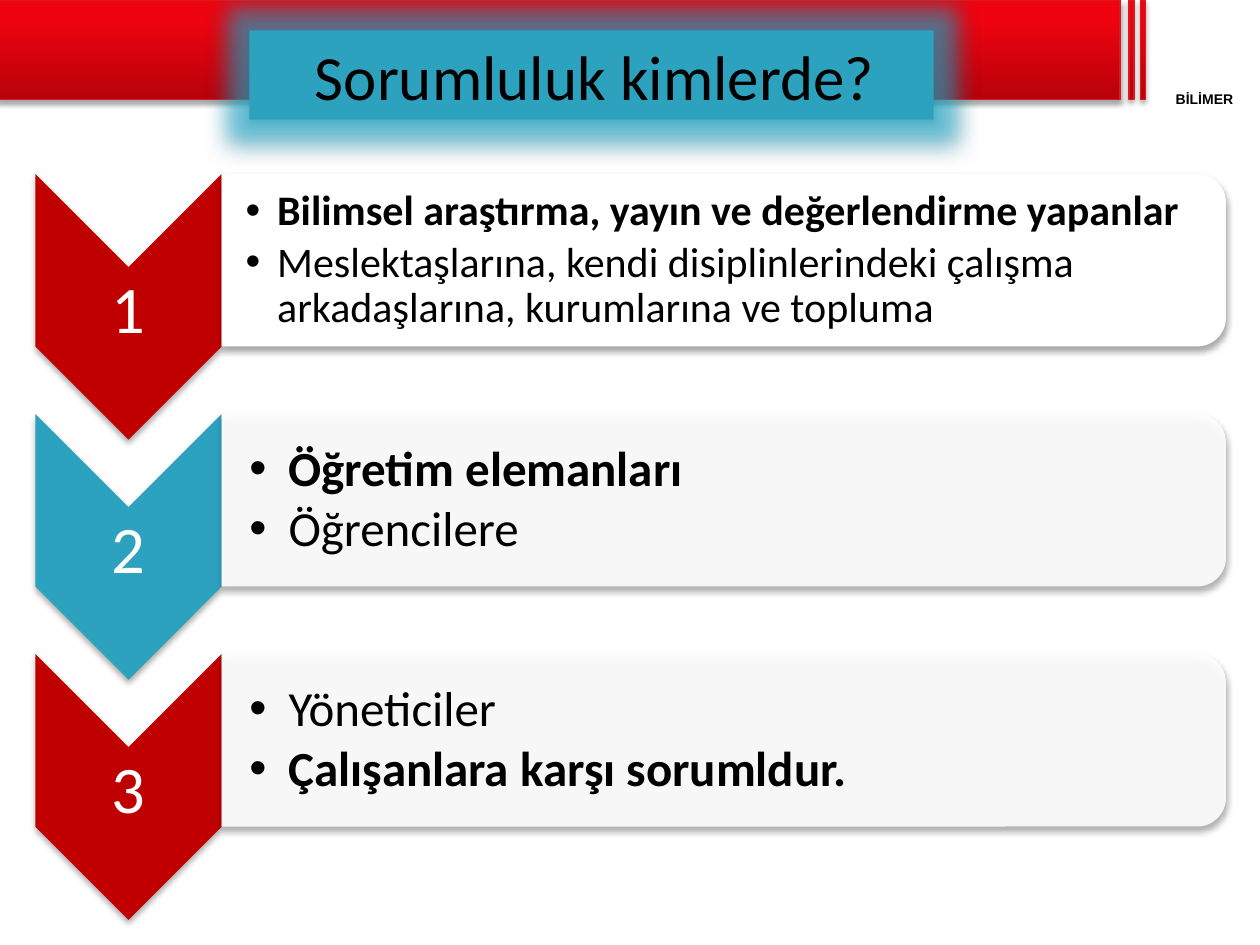
from lxml.etree import SubElement
from pptx import Presentation
from pptx.dml.color import RGBColor
from pptx.enum.shapes import MSO_SHAPE
from pptx.enum.text import MSO_ANCHOR, MSO_AUTO_SIZE, PP_ALIGN
from pptx.oxml.ns import qn
from pptx.util import Inches, Pt

BLACK = RGBColor(0x00, 0x00, 0x00)
WHITE = RGBColor(0xFF, 0xFF, 0xFF)
CRIMSON = RGBColor(0xC0, 0x00, 0x00)
TEAL = RGBColor(0x2D, 0xA2, 0xBF)
GLOW = RGBColor(0x1A, 0xB2, 0xD8)
BANNER_DARK = RGBColor(0xB8, 0x02, 0x0B)
BANNER_LIGHT = RGBColor(0xEE, 0x03, 0x0E)
BANNER_LINE = RGBColor(0xDA, 0x1A, 0x23)

# Chevron colour, card opacity, text size, left inset, bullet indent, (line, bold) pairs
STEPS = [
    (CRIMSON, 100, 24, 0.19, 0.25, [
        ("Bilimsel araştırma, yayın ve değerlendirme yapanlar", True),
        ("Meslektaşlarına, kendi disiplinlerindeki çalışma "
         "arkadaşlarına, kurumlarına ve topluma", False)]),
    (TEAL, 90, 28, 0.22, 0.31, [
        ("Öğretim elemanları", True), ("Öğrencilere", False)]),
    (CRIMSON, 90, 28, 0.22, 0.31, [
        ("Yöneticiler", False), ("Çalışanlara karşı sorumldur.", True)]),
]


def add_alpha(color, percent):
    SubElement(color, qn("a:alpha"), val=str(percent * 1000))


def add_effect(shape, kind, color, opacity, **settings):
    """Append a glow or shadow to the shape's own effect list."""
    shape.shadow.inherit = False
    effects = shape._element.spPr.find(qn("a:effectLst"))
    effect = SubElement(effects, qn(f"a:{kind}"), **settings)
    add_alpha(SubElement(effect, qn("a:srgbClr"), val=str(color)), opacity)


def add_shadow(shape, opacity, blur, distance):
    add_effect(shape, "outerShdw", BLACK, opacity, blurRad=str(Pt(blur)),
               dist=str(Pt(distance)), dir="5400000", rotWithShape="0")


def place(shape, left, top, width, height):
    shape.left, shape.top = Inches(left), Inches(top)
    shape.width, shape.height = Inches(width), Inches(height)


def bring_to_front(page, shape):
    page.shapes[-1]._element.addnext(shape._element)


def set_frame(frame, left_inset, inset, anchor=MSO_ANCHOR.MIDDLE):
    frame.word_wrap = True
    frame.auto_size = MSO_AUTO_SIZE.NONE
    frame.vertical_anchor = anchor
    frame.margin_left = Inches(left_inset)
    frame.margin_right = frame.margin_top = frame.margin_bottom = Inches(inset)


def style(para, size, color, bold=False, name="Calibri"):
    for span in para.runs:
        span.font.name, span.font.size = name, Pt(size)
        span.font.color.rgb, span.font.bold = color, bold


def add_label(page, text, left, top, width, height, inset, size, color, **font):
    box = page.shapes.add_textbox(0, 0, 0, 0)
    place(box, left, top, width, height)
    set_frame(box.text_frame, inset, inset)
    para = box.text_frame.paragraphs[0]
    para.text, para.alignment = text, PP_ALIGN.CENTER
    style(para, size, color, **font)


def add_turned(page, kind, left, top, width, height, color):
    """Add a shape turned a quarter clockwise that fills the given box."""
    shape = page.shapes.add_shape(kind, 0, 0, 0, 0)
    place(shape, left + (width - height) / 2, top + (height - width) / 2, height, width)
    shape.rotation = 90
    shape.fill.solid()
    shape.fill.fore_color.rgb = color
    shape.line.fill.background()
    add_shadow(shape, 32, 3.5, 2.2)
    return shape


def add_banner(page, height):
    for left, width in ((-0.02, 8.91), (8.96, 0.04), (9.05, 0.04)):
        bar = page.shapes.add_shape(MSO_SHAPE.RECTANGLE, 0, 0, 0, 0)
        place(bar, left, 0, width, height)
        bar.fill.gradient()
        bar.fill.gradient_angle = 90
        dark, light = bar.fill.gradient_stops
        dark.color.rgb, dark.position = BANNER_DARK, 0
        light.color.rgb, light.position = BANNER_LIGHT, 0.8
        bar.line.color.rgb, bar.line.width = BANNER_LINE, Pt(0.75)
        add_shadow(bar, 35, 3.1, 1.8)
    add_label(page, "BİLİMER", 9.12, 0.72, 0.88, 0.13, 0, 8, BLACK, bold=True, name="Arial")


def fill_list(frame, lines, size, indent):
    for index, (text, bold) in enumerate(lines):
        para = frame.paragraphs[0] if index == 0 else frame.add_paragraph()
        para.text = text
        properties = para._p.get_or_add_pPr()
        properties.set("marL", str(Inches(indent)))
        properties.set("indent", str(-Inches(indent)))
        SubElement(properties, qn("a:buFont"), typeface="Arial")
        SubElement(properties, qn("a:buChar"), char="•")
        para.alignment = PP_ALIGN.LEFT
        para.line_spacing = 0.9
        para.space_before, para.space_after = Pt(0), Pt(size * 0.15)
        style(para, size, BLACK, bold)


def add_step(page, body, number, left, top, step):
    color, opacity, size, inset, indent, lines = step
    chevron_width, card_width, card_height = 1.48, 7.97, 1.37
    card_left = left + chevron_width
    add_turned(page, MSO_SHAPE.CHEVRON, left, top, chevron_width, 2.11, color)
    add_label(page, str(number), left, top + chevron_width / 2, chevron_width, 0.63,
              0.03, 38, WHITE)
    card = add_turned(page, MSO_SHAPE.ROUND_2_SAME_RECTANGLE, card_left, top,
                      card_width, card_height, WHITE)
    if opacity < 100:
        add_alpha(card._element.spPr.find(qn("a:solidFill"))[0], opacity)
    place(body, card_left, top + 0.07, card_width - 0.07, card_height - 0.13)
    set_frame(body.text_frame, inset, 0.02)
    fill_list(body.text_frame, lines, size, indent)
    bring_to_front(page, body)


def set_title(page, text, left, top, width, height):
    title = page.shapes.title
    place(title, left, top, width, height)
    title.fill.solid()
    title.fill.fore_color.rgb = TEAL
    add_effect(title, "glow", GLOW, 60, rad=str(Inches(0.36)))
    add_shadow(title, 32, 3.5, 2.2)
    set_frame(title.text_frame, 0.1, 0.05)
    para = title.text_frame.paragraphs[0]
    para.text, para.alignment = text, PP_ALIGN.CENTER
    style(para, 36, BLACK)
    bring_to_front(page, title)


def main():
    deck = Presentation()
    deck.slide_width, deck.slide_height = Inches(10), Inches(7.5)
    page = deck.slides.add_slide(deck.slide_layouts.get_by_name("Comparison"))
    *bodies, spare = list(page.placeholders)[1:]
    spare._element.getparent().remove(spare._element)
    add_banner(page, 0.79)
    for index, (body, step) in enumerate(zip(bodies, STEPS)):
        add_step(page, body, index + 1, 0.28, 1.38 + index * 1.905, step)
    set_title(page, "Sorumluluk kimlerde?", 1.98, 0.24, 5.43, 0.71)
    deck.save("out.pptx")


if __name__ == "__main__":
    main()
